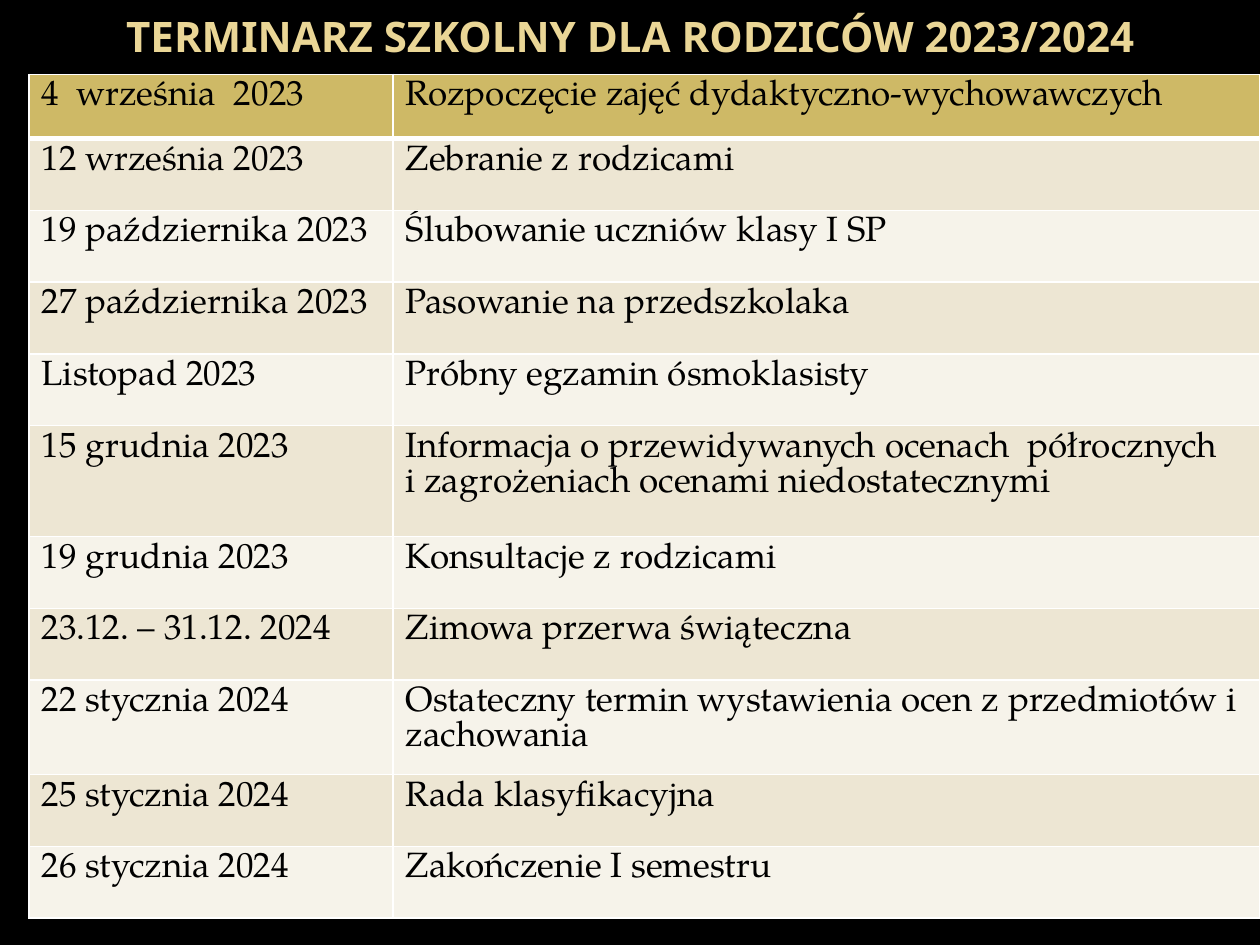
import lxml.etree
import pptx
import pptx.dml.color
import pptx.enum.text
import pptx.oxml.ns
import pptx.util
from pptx.util import Inches

THEME = {
    "background": "000000",
    "title": "EAD696",
    "text": "000000",
    "border": "FFFFFF",
    "header": "CEB966",
    "bands": ("EDE6D3", "F6F3EA"),
    "title_font": "Noto Sans",
    "body_font": "TeX Gyre Pagella",
    "title_size": 24,
    "body_size": 20,
    "thin": 1,
    "thick": 3,
}

# Date, event, row height in inches
EVENTS = [
    ("4  września  2023", "Rozpoczęcie zajęć dydaktyczno-wychowawczych", 0.51),
    ("12 września 2023", "Zebranie z rodzicami", 0.57),
    ("19 października 2023", "Ślubowanie uczniów klasy I SP", 0.57),
    ("27 października 2023", "Pasowanie na przedszkolaka", 0.57),
    ("Listopad 2023", "Próbny egzamin ósmoklasisty", 0.57),
    ("15 grudnia 2023",
     "Informacja o przewidywanych ocenach  półrocznych\n"
     "i zagrożeniach ocenami niedostatecznymi", 0.88),
    ("19 grudnia 2023", "Konsultacje z rodzicami", 0.57),
    ("23.12. – 31.12. 2024", "Zimowa przerwa świąteczna", 0.57),
    ("22 stycznia 2024",
     "Ostateczny termin wystawienia ocen z przedmiotów i zachowania", 0.75),
    ("25 stycznia 2024", "Rada klasyfikacyjna", 0.57),
    ("26 stycznia 2024", "Zakończenie I semestru", 0.57),
]
COLUMN_WIDTHS = (2.89, 6.88)


def write(frame, text, *, font, size, color, bold=False, align=None, spacing=None):
    """Fill a text frame, one paragraph a line, in a single format."""
    frame.text = text
    for paragraph in frame.paragraphs:
        paragraph.alignment = align
        paragraph.line_spacing = spacing
        for run in paragraph.runs:
            run.font.name = font
            run.font.size = pptx.util.Pt(size)
            run.font.bold = bold
            run.font.color.rgb = pptx.dml.color.RGBColor.from_string(color)


def add_borders(cell, **widths):
    """Draw the cell's L, R, T and B borders, in points; call before filling."""
    qn = pptx.oxml.ns.qn
    properties = cell._tc.get_or_add_tcPr()
    for side in "LRTB":
        line = lxml.etree.SubElement(properties, qn(f"a:ln{side}"))
        line.set("w", str(pptx.util.Pt(widths.get(side, THEME["thin"]))))
        fill = lxml.etree.SubElement(line, qn("a:solidFill"))
        lxml.etree.SubElement(fill, qn("a:srgbClr")).set("val", THEME["border"])


presentation = pptx.Presentation()
presentation.slide_width = Inches(10)
presentation.slide_height = Inches(7.5)
slide = presentation.slides.add_slide(presentation.slide_layouts.get_by_name("Title Only"))
slide.background.fill.solid()
slide.background.fill.fore_color.rgb = pptx.dml.color.RGBColor.from_string(THEME["background"])

heading = slide.shapes.title
heading.left, heading.top = Inches(0), Inches(0)
heading.width, heading.height = Inches(10), Inches(0.56)
heading.text_frame.auto_size = pptx.enum.text.MSO_AUTO_SIZE.NONE
heading.text_frame.vertical_anchor = pptx.enum.text.MSO_ANCHOR.MIDDLE
write(heading.text_frame, "TERMINARZ SZKOLNY DLA RODZICÓW 2023/2024",
      font=THEME["title_font"], size=THEME["title_size"], color=THEME["title"],
      bold=True, align=pptx.enum.text.PP_ALIGN.CENTER)

calendar = slide.shapes.add_table(
    len(EVENTS), len(COLUMN_WIDTHS), Inches(0.23), Inches(0.59),
    Inches(sum(COLUMN_WIDTHS)), Inches(sum(height for *_, height in EVENTS))).table
calendar.first_row = False
calendar.horz_banding = False
for column, width in zip(calendar.columns, COLUMN_WIDTHS):
    column.width = Inches(width)

for index, (*entries, height) in enumerate(EVENTS):
    calendar.rows[index].height = Inches(height)
    band = THEME["bands"][(index - 1) % 2] if index else THEME["header"]
    # The thick rule under the first row is shared with the row below
    rule = {0: {"B": THEME["thick"]}, 1: {"T": THEME["thick"]}}.get(index, {})
    for column_index, entry in enumerate(entries):
        cell = calendar.cell(index, column_index)
        add_borders(cell, **rule)
        cell.fill.solid()
        cell.fill.fore_color.rgb = pptx.dml.color.RGBColor.from_string(band)
        write(cell.text_frame, entry, font=THEME["body_font"], size=THEME["body_size"],
              color=THEME["text"], spacing=pptx.util.Pt(THEME["body_size"]))

presentation.save("out.pptx")
